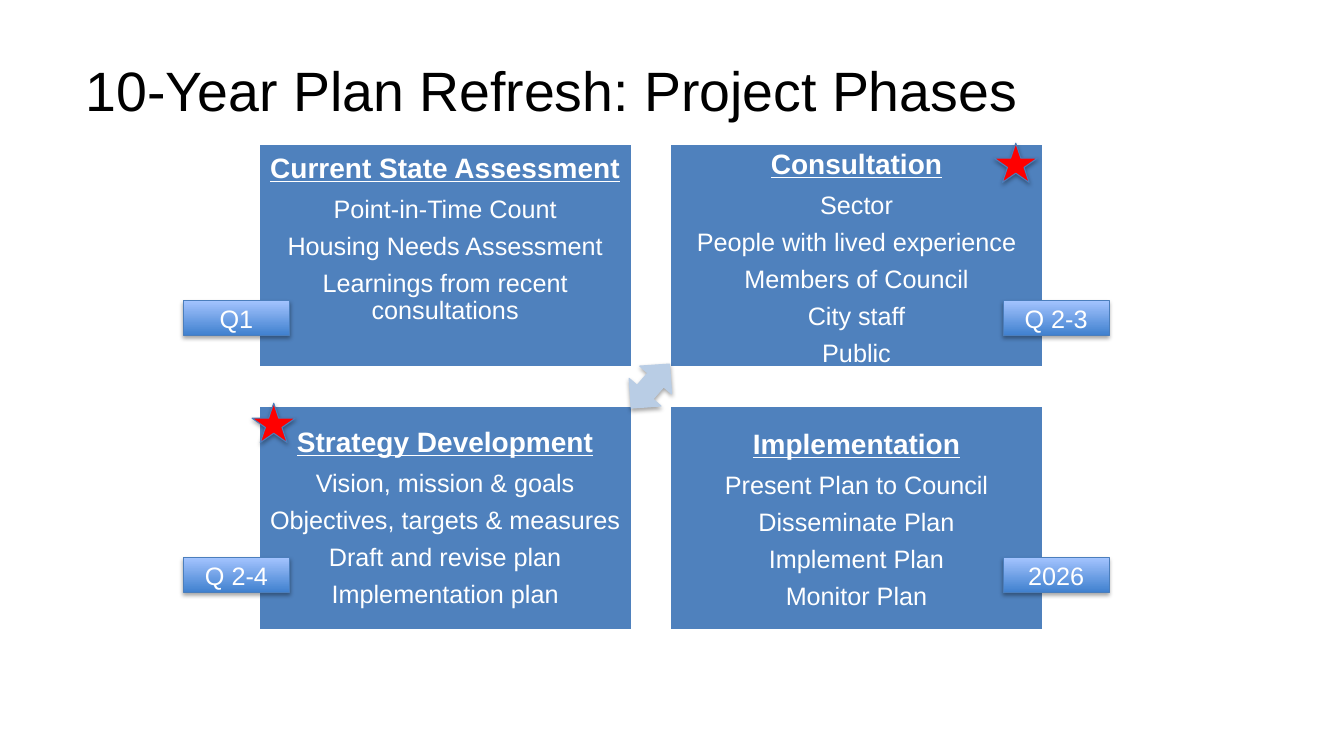
from lxml.etree import SubElement
from pptx import Presentation
from pptx.dml.color import RGBColor
from pptx.enum.shapes import MSO_SHAPE
from pptx.enum.text import MSO_ANCHOR, MSO_AUTO_SIZE, PP_ALIGN
from pptx.oxml.ns import qn
from pptx.util import Inches, Pt

BLACK = RGBColor(0x00, 0x00, 0x00)
WHITE = RGBColor(0xFF, 0xFF, 0xFF)
PHASE_BLUE = RGBColor(0x4F, 0x81, 0xBD)
EDGE_BLUE = RGBColor(0x4B, 0x7E, 0xBC)
TAG_DARK = RGBColor(0x3F, 0x80, 0xCE)
TAG_LIGHT = RGBColor(0xA4, 0xC4, 0xFF)
ARROW_BLUE = RGBColor(0xB9, 0xCD, 0xE5)
RED = RGBColor(0xFF, 0x00, 0x00)
FONT = "Arial"

TITLE = "10-Year Plan Refresh: Project Phases"
# heading, steps, quarter, space above the heading; in rows of two
PHASES = [
    ("Current State Assessment",
     ["Point-in-Time Count", "Housing Needs Assessment",
      "Learnings from recent consultations"], "Q1", 0.11),
    ("Consultation",
     ["Sector", "People with lived experience", "Members of Council",
      "City staff", "Public"], "Q 2-3", 0.07),
    ("Strategy Development",
     ["Vision, mission & goals", "Objectives, targets & measures",
      "Draft and revise plan", "Implementation plan"], "Q 2-4", 0.23),
    ("Implementation",
     ["Present Plan to Council", "Disseminate Plan", "Implement Plan",
      "Monitor Plan"], "2026", 0.25),
]
STARS = [(9.86, 1.42), (2.5, 4.0)]

PHASE_LEFT, PHASE_TOP = 2.56, 1.42
PHASE_WIDTH, PHASE_HEIGHT = 3.71, 2.23
COLUMN_STEP, ROW_STEP = 4.08, 2.6
TAG_LEFTS, TAG_TOPS = (1.82, 9.95), (2.98, 5.53)


def add_block(page, kind, left, top, width, height, fill, edge, edge_width):
    block = page.shapes.add_shape(
        kind, Inches(left), Inches(top), Inches(width), Inches(height))
    block.shadow.inherit = False
    if fill is not None:
        block.fill.solid()
        block.fill.fore_color.rgb = fill
    block.line.color.rgb = edge
    block.line.width = Pt(edge_width)
    return block


def add_shadow(block):
    effects = block.element.spPr.find(qn("a:effectLst"))
    shadow = SubElement(effects, qn("a:outerShdw"), blurRad=str(Pt(3.1)),
                        dist=str(Pt(1.8)), dir="5400000", rotWithShape="0")
    color = SubElement(shadow, qn("a:srgbClr"), val="000000")
    SubElement(color, qn("a:alpha"), val="35000")


def style_text(para, size, color):
    para.font.name = FONT
    para.font.size = Pt(size)
    para.font.color.rgb = color


def add_phase(page, left, top, heading, steps, space_above):
    box = add_block(page, MSO_SHAPE.RECTANGLE, left, top, PHASE_WIDTH,
                    PHASE_HEIGHT, PHASE_BLUE, WHITE, 2)
    frame = box.text_frame
    frame.word_wrap = True
    frame.vertical_anchor = MSO_ANCHOR.TOP
    frame.margin_left = frame.margin_right = Inches(0.07)
    frame.margin_top, frame.margin_bottom = Inches(space_above), 0
    frame.text = "\n".join([heading, *steps])
    for index, para in enumerate(frame.paragraphs):
        is_heading = index == 0
        style_text(para, 20 if is_heading else 18, WHITE)
        para.font.bold = para.font.underline = is_heading
        para.alignment = PP_ALIGN.CENTER
        para.line_spacing = 0.9
        para.space_after = Pt(8.5 if is_heading else 7.1)


def add_tag(page, left, top, label):
    tag = add_block(page, MSO_SHAPE.RECTANGLE, left, top, 1.05, 0.35,
                    None, EDGE_BLUE, 0.75)
    tag.fill.gradient()
    tag.fill.gradient_angle = 90
    for stop, color in zip(tag.fill.gradient_stops, (TAG_DARK, TAG_LIGHT)):
        stop.color.rgb = color
    add_shadow(tag)
    frame = tag.text_frame
    frame.text = label
    frame.vertical_anchor = MSO_ANCHOR.MIDDLE
    frame.paragraphs[0].alignment = PP_ALIGN.CENTER
    style_text(frame.paragraphs[0], 18, WHITE)


def main():
    deck = Presentation()
    deck.slide_width, deck.slide_height = Inches(13.33), Inches(7.5)
    page = deck.slides.add_slide(deck.slide_layouts[5])

    title = page.shapes.title
    title.left, title.top = Inches(0.75), Inches(0.52)
    title.width, title.height = Inches(11.42), Inches(0.74)
    title.text_frame.text = TITLE
    title.text_frame.auto_size = MSO_AUTO_SIZE.NONE
    title.text_frame.vertical_anchor = MSO_ANCHOR.MIDDLE
    title.text_frame.paragraphs[0].alignment = PP_ALIGN.LEFT
    style_text(title.text_frame.paragraphs[0], 39.6, BLACK)

    for index, (heading, steps, quarter, space_above) in enumerate(PHASES):
        row, column = divmod(index, 2)
        add_phase(page, PHASE_LEFT + column * COLUMN_STEP,
                  PHASE_TOP + row * ROW_STEP, heading, steps, space_above)
        add_tag(page, TAG_LEFTS[column], TAG_TOPS[row], quarter)

    arrow = add_block(page, MSO_SHAPE.LEFT_RIGHT_ARROW, 6.16, 3.62, 0.58, 0.42,
                      ARROW_BLUE, ARROW_BLUE, 0.75)
    arrow.rotation = 131
    add_shadow(arrow)

    for left, top in STARS:
        star = add_block(page, MSO_SHAPE.STAR_5_POINT, left, top, 0.43, 0.39,
                         RED, EDGE_BLUE, 0.75)
        add_shadow(star)

    deck.save("out.pptx")


if __name__ == "__main__":
    main()
